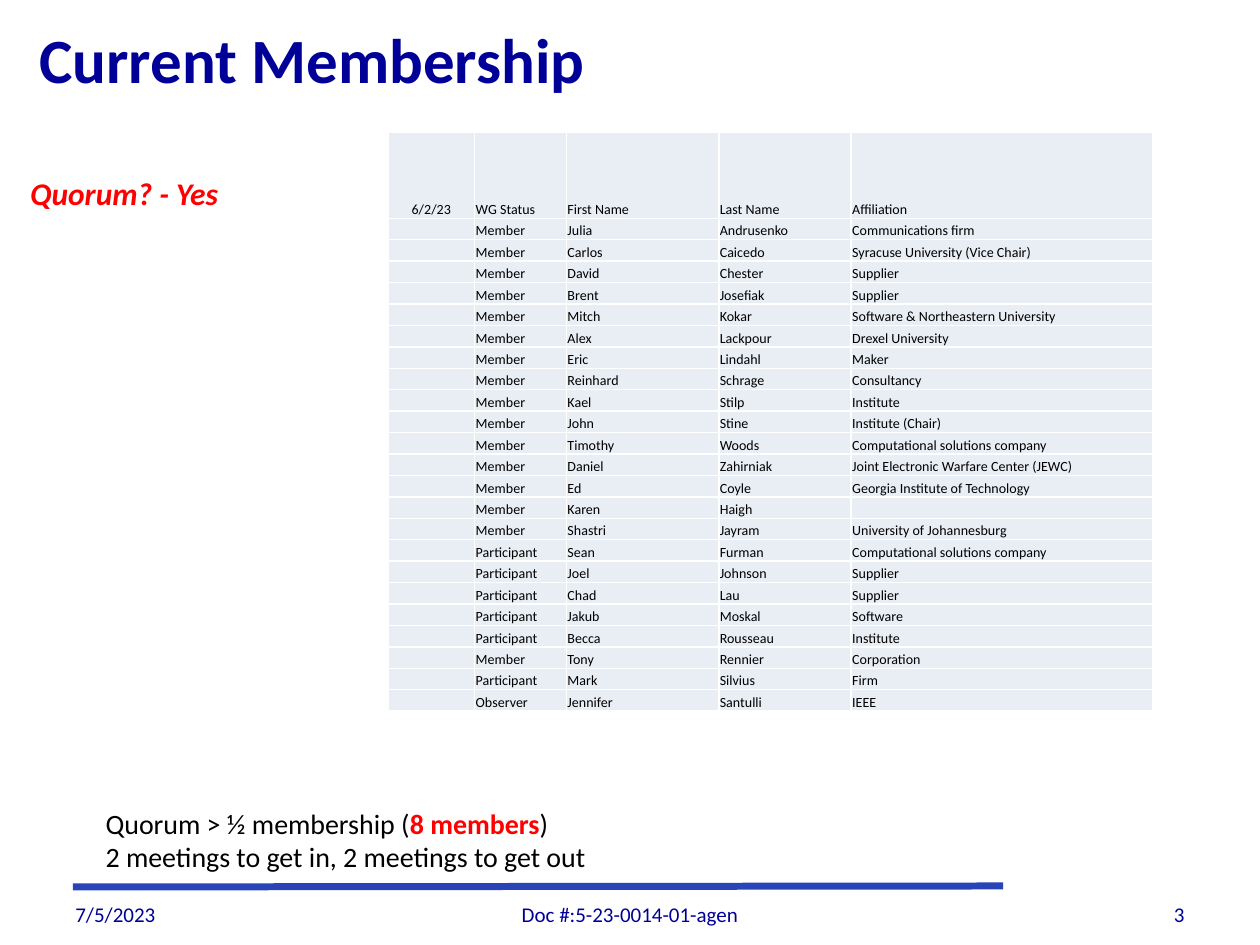
from lxml import etree
from pptx import Presentation
from pptx.dml.color import RGBColor
from pptx.enum.shapes import MSO_CONNECTOR
from pptx.enum.text import MSO_ANCHOR, PP_ALIGN
from pptx.oxml.ns import qn
from pptx.util import Cm, Pt

LEFT, CENTER, RIGHT = PP_ALIGN.LEFT, PP_ALIGN.CENTER, PP_ALIGN.RIGHT
TOP, MIDDLE, BOTTOM = MSO_ANCHOR.TOP, MSO_ANCHOR.MIDDLE, MSO_ANCHOR.BOTTOM
STRAIGHT = MSO_CONNECTOR.STRAIGHT
TITLE_ONLY_LAYOUT = 5

FONT = "Calibri"
NAVY = RGBColor(0x00, 0x00, 0x99)
RULE_BLUE = RGBColor(0x29, 0x44, 0xB7)
RED = RGBColor(0xFF, 0x00, 0x00)
BLACK = RGBColor(0x00, 0x00, 0x00)
CELL_FILL = RGBColor(0xE9, 0xED, 0xF4)
BORDER = RGBColor(0xFF, 0xFF, 0xFF)

COLUMN_WIDTHS = [1.75, 1.85, 3.07, 2.67, 6.07]
HEADER_HEIGHT = 1.73
CELL_TEXT_SIZE = 8
HEADINGS = ("6/2/23", "WG Status", "First Name", "Last Name", "Affiliation")
PEOPLE = [
    ("Member", "Julia", "Andrusenko", "Communications firm"),
    ("Member", "Carlos", "Caicedo", "Syracuse University (Vice Chair)"),
    ("Member", "David", "Chester", "Supplier"),
    ("Member", "Brent", "Josefiak", "Supplier"),
    ("Member", "Mitch", "Kokar", "Software & Northeastern University"),
    ("Member", "Alex", "Lackpour", "Drexel University"),
    ("Member", "Eric", "Lindahl", "Maker"),
    ("Member", "Reinhard", "Schrage", "Consultancy"),
    ("Member", "Kael", "Stilp", "Institute"),
    ("Member", "John", "Stine", "Institute (Chair)"),
    ("Member", "Timothy", "Woods", "Computational solutions company"),
    ("Member", "Daniel", "Zahirniak", "Joint Electronic Warfare Center (JEWC)"),
    ("Member", "Ed", "Coyle", "Georgia Institute of Technology"),
    ("Member", "Karen", "Haigh", ""),
    ("Member", "Shastri", "Jayram", "University of Johannesburg"),
    ("Participant", "Sean", "Furman", "Computational solutions company"),
    ("Participant", "Joel", "Johnson", "Supplier"),
    ("Participant", "Chad", "Lau", "Supplier"),
    ("Participant", "Jakub", "Moskal", "Software"),
    ("Participant", "Becca", "Rousseau", "Institute"),
    ("Member", "Tony", "Rennier", "Corporation"),
    ("Participant", "Mark", "Silvius", "Firm"),
    ("Observer", "Jennifer", "Santulli", "IEEE"),
]


def add_span(para, text, size, color, bold=False, italic=False):
    span = para.add_run()
    span.text = text
    font = span.font
    font.name, font.size, font.bold, font.italic = FONT, Pt(size), bold, italic
    font.color.rgb = color


def add_text_box(page, left, top, width, height, anchor=TOP):
    box = page.shapes.add_textbox(Cm(left), Cm(top), Cm(width), Cm(height))
    frame = box.text_frame
    frame.word_wrap = True
    frame.vertical_anchor = anchor
    return frame


def fill_title(page, left, top, width, height):
    title = page.shapes.title
    title.left, title.top = Cm(left), Cm(top)
    title.width, title.height = Cm(width), Cm(height)
    title.text_frame.vertical_anchor = MIDDLE
    para = title.text_frame.paragraphs[0]
    para.alignment = CENTER
    add_span(para, "Current Membership", 36, NAVY, bold=True)


def add_quorum_answer(page, left, top, width, height):
    frame = add_text_box(page, left, top, width, height)
    add_span(frame.paragraphs[0], "Quorum? - Yes", 18, RED, bold=True, italic=True)


def add_quorum_rule(page, left, top, width, height):
    frame = add_text_box(page, left, top, width, height)
    frame.margin_left, frame.margin_right = Cm(2.03), 0
    para = frame.paragraphs[0]
    add_span(para, "Quorum > ½ membership (", 16, BLACK)
    add_span(para, "8 members", 16, RED, bold=True)
    add_span(para, ")", 16, BLACK)
    add_span(frame.add_paragraph(), "2 meetings to get in, 2 meetings to get out", 16, BLACK)


def add_borders(cell):
    properties = cell._tc.get_or_add_tcPr()
    for position, side in enumerate(("a:lnL", "a:lnR", "a:lnT", "a:lnB")):
        line = etree.Element(qn(side), w=str(Pt(1)))
        solid = etree.SubElement(line, qn("a:solidFill"))
        etree.SubElement(solid, qn("a:srgbClr"), val=str(BORDER))
        properties.insert(position, line)


def fill_cell(cell, text, alignment):
    cell.fill.solid()
    cell.fill.fore_color.rgb = CELL_FILL
    cell.vertical_anchor = BOTTOM
    cell.margin_left = cell.margin_right = cell.margin_top = Cm(0.02)
    cell.margin_bottom = 0
    para = cell.text_frame.paragraphs[0]
    para.alignment = alignment
    if text:
        add_span(para, text, CELL_TEXT_SIZE, BLACK)
    else:
        # Keeps an empty cell from stretching its row
        etree.SubElement(para._p, qn("a:endParaRPr"), sz=str(CELL_TEXT_SIZE * 100))
    add_borders(cell)


def add_member_table(page, left, top, width, height):
    rows = [HEADINGS] + [("",) + person for person in PEOPLE]
    table = page.shapes.add_table(
        len(rows), len(HEADINGS), Cm(left), Cm(top), Cm(width), Cm(height)).table
    table.first_row = table.horz_banding = False
    for column, column_width in zip(table.columns, COLUMN_WIDTHS):
        column.width = Cm(column_width)
    row_height = (height - HEADER_HEIGHT) / len(PEOPLE)
    for row_index, values in enumerate(rows):
        table.rows[row_index].height = Cm(row_height if row_index else HEADER_HEIGHT)
        for column_index, text in enumerate(values):
            alignment = LEFT if column_index else CENTER
            fill_cell(table.cell(row_index, column_index), text, alignment)


def add_footer(page, left, top, width, height):
    # Rule above the footer
    rule = page.shapes.add_connector(
        STRAIGHT, Cm(left + 0.2), Cm(top - 0.03), Cm(left + 18.95), Cm(top - 0.05))
    rule.line.color.rgb = RULE_BLUE
    rule.line.width = Pt(4)
    etree.SubElement(rule._element.spPr, qn("a:effectLst"))

    # Date, document number and page number
    side, middle = 5.93, 8.05
    parts = [
        ("7/5/2023", 0, side, LEFT),
        ("Doc #:5-23-0014-01-agen", (width - middle) / 2, middle, CENTER),
        ("3", width - side, side, RIGHT),
    ]
    for text, offset, part_width, alignment in parts:
        frame = add_text_box(page, left + offset, top, part_width, height, MIDDLE)
        para = frame.paragraphs[0]
        para.alignment = alignment
        add_span(para, text, 12, NAVY)


def main():
    deck = Presentation()
    deck.slide_width, deck.slide_height = Cm(25.4), Cm(19.05)
    page = deck.slides.add_slide(deck.slide_layouts[TITLE_ONLY_LAYOUT])
    add_footer(page, 1.27, 17.91, 22.86, 1.02)
    fill_title(page, 0.36, 0, 11.86, 2.34)
    add_quorum_rule(page, 0.1, 16.13, 12.14, 1.63)
    add_quorum_answer(page, 0.36, 3.38, 6.2, 1.8)
    add_member_table(page, 7.82, 2.67, sum(COLUMN_WIDTHS), 11.68)
    deck.save("out.pptx")


if __name__ == "__main__":
    main()
